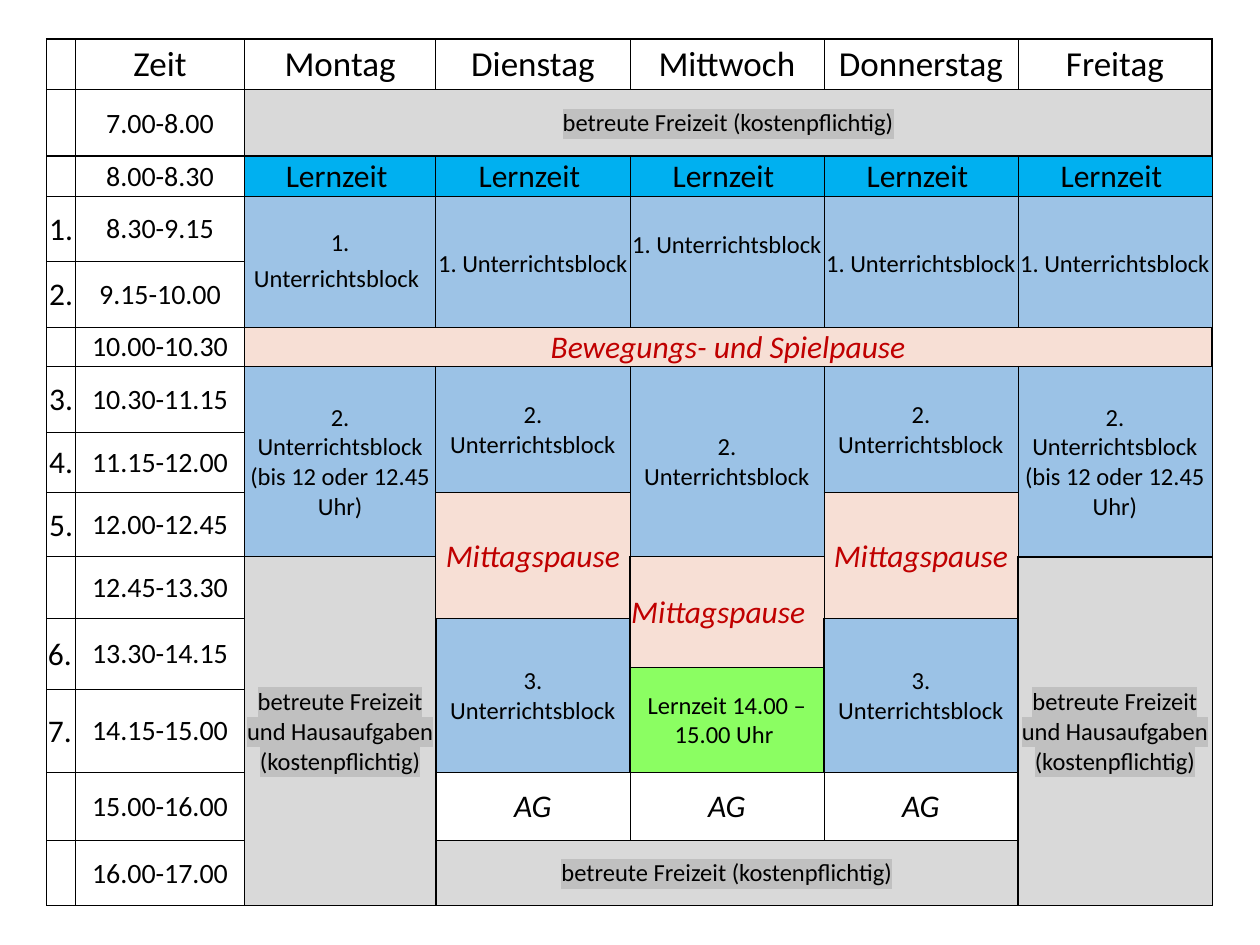
"""Build a weekly school timetable slide."""
from itertools import product

from lxml import etree
from pptx import Presentation
from pptx.dml.color import RGBColor
from pptx.enum import text
from pptx.oxml import ns
from pptx.util import Inches, Pt

BLACK = RGBColor(0x00, 0x00, 0x00)
WHITE = RGBColor(0xFF, 0xFF, 0xFF)
RED = RGBColor(0xC0, 0x00, 0x00)
GREY = RGBColor(0xD9, 0xD9, 0xD9)
SILVER = RGBColor(0xC0, 0xC0, 0xC0)
CYAN = RGBColor(0x00, 0xB0, 0xF0)
BLUE = RGBColor(0x9D, 0xC3, 0xE6)
STEEL = RGBColor(0x9B, 0xC2, 0xE6)
PEACH = RGBColor(0xF7, 0xDF, 0xD5)
GREEN = RGBColor(0x8B, 0xFE, 0x62)

FONT = "Calibri"
THIN, THICK = Pt(0.5), Pt(1)
TABLE_BOX = (0.37, 0.31, 9.25, 6.88)
COLUMN_WIDTHS = [0.23, 1.34, 1.52] + [1.54] * 4
ROW_HEIGHTS = [0.4, 0.53, 0.31, 0.52, 0.52, 0.31, 0.52, 0.48, 0.51, 0.49,
               0.39, 0.17, 0.66, 0.54, 0.52]
FRAMED_ROWS = (0, 1, 5)
DAY_COLUMNS = range(2, 7)

STYLES = {
    "head": {"size": 20},
    "time": {"size": 16},
    "period": {"size": 18},
    "period_left": {"size": 18, "align": text.PP_ALIGN.LEFT},
    "care": {"size": 14, "fill": GREY, "highlight": SILVER},
    "study": {"size": 18, "fill": CYAN},
    "block": {"size": 14, "fill": BLUE},
    "late_block": {"size": 14, "fill": STEEL},
    "pause": {"size": 18, "fill": PEACH, "color": RED, "italic": True},
    "pause_left": {"size": 18, "fill": PEACH, "color": RED, "italic": True,
                   "align": text.PP_ALIGN.LEFT},
    "long_study": {"size": 14, "fill": GREEN},
    "club": {"size": 18, "italic": True},
}

HEADINGS = ["Zeit", "Montag", "Dienstag", "Mittwoch", "Donnerstag", "Freitag"]
TIMES = {1: "7.00-8.00", 2: "8.00-8.30", 3: "8.30-9.15", 4: "9.15-10.00",
         5: "10.00-10.30", 6: "10.30-11.15", 7: "11.15-12.00",
         8: "12.00-12.45", 9: "12.45-13.30", 10: "13.30-14.15",
         12: "14.15-15.00", 13: "15.00-16.00", 14: "16.00-17.00"}
PERIODS = {3: "1.", 4: "2.", 6: "3.", 7: "4.", 8: "5.", 10: "6.", 12: "7."}
CARE = "betreute Freizeit (kostenpflichtig)"
HOMEWORK_CARE = "betreute Freizeit und Hausaufgaben\n(kostenpflichtig)"
SECOND = "2.\nUnterrichtsblock"
SECOND_LONG = SECOND + " (bis 12 oder 12.45 Uhr)"
THIRD = "3.\nUnterrichtsblock"

LESSONS = [
    (1, 2, 1, 5, "care", CARE, ""),
    (5, 2, 1, 5, "pause", "Bewegungs- und Spielpause", ""),
    (6, 2, 3, 1, "late_block", SECOND_LONG, ""),
    (6, 3, 2, 1, "late_block", SECOND, ""),
    (6, 4, 3, 1, "late_block", SECOND, ""),
    (6, 5, 2, 1, "late_block", SECOND, ""),
    (6, 6, 3, 1, "late_block", SECOND_LONG, "B"),
    (8, 3, 2, 1, "pause", "Mittagspause", ""),
    (8, 5, 2, 1, "pause", "Mittagspause", ""),
    (9, 2, 6, 1, "care", HOMEWORK_CARE, ""),
    (9, 4, 2, 1, "pause_left", "Mittagspause", "L"),
    (9, 6, 6, 1, "care", HOMEWORK_CARE, "LTB"),
    (10, 3, 3, 1, "block", THIRD, "L"),
    (10, 5, 3, 1, "late_block", THIRD, "L"),
    (11, 4, 2, 1, "long_study", "Lernzeit 14.00 – 15.00 Uhr ", "L"),
    (13, 3, 1, 1, "club", "AG", "L"),
    (13, 4, 1, 1, "club", "AG", ""),
    (13, 5, 1, 1, "club", "AG", ""),
    (14, 3, 1, 3, "care", CARE, "L"),
]


def timetable_blocks():
    """Return every filled block as row, column, spans, style, text and thick edges."""
    blocks = [(0, column, 1, 1, "head", heading, "")
              for column, heading in enumerate(HEADINGS, 1)]
    for row, time in TIMES.items():
        span = 2 if row == 10 else 1
        period_style = "period_left" if row >= 10 else "period"
        blocks.append((row, 0, span, 1, period_style, PERIODS.get(row, ""), ""))
        blocks.append((row, 1, span, 1, "time", time, ""))
    for column in DAY_COLUMNS:
        blocks.append((2, column, 1, 1, "study", "Lernzeit ", ""))
        blocks.append((3, column, 2, 1, "block", "1. Unterrichtsblock", ""))
    return blocks + LESSONS


def set_borders(cell, thick_edges):
    """Draw black lines on the four edges of a cell."""
    properties = cell._tc.get_or_add_tcPr()
    for position, edge in enumerate("LRTB"):
        width = THICK if edge in thick_edges else THIN
        line = etree.Element(ns.qn(f"a:ln{edge}"), w=str(int(width)))
        fill = etree.SubElement(line, ns.qn("a:solidFill"))
        etree.SubElement(fill, ns.qn("a:srgbClr"), val=str(BLACK))
        properties.insert(position, line)


def format_cell(cell, fill):
    """Set the fill, insets and anchor of a cell and keep empty text small."""
    cell.fill.solid()
    cell.fill.fore_color.rgb = fill
    formats = {"margin_left": Inches(0.01), "margin_right": Inches(0.01),
               "margin_top": Inches(0.01), "margin_bottom": 0,
               "vertical_anchor": text.MSO_ANCHOR.MIDDLE}
    for name, value in formats.items():
        setattr(cell, name, value)
    ending = cell.text_frame.paragraphs[0]._p.get_or_add_endParaRPr()
    ending.set("sz", "800")


def add_run(paragraph, content, style, size):
    """Add one formatted run to a paragraph."""
    run = paragraph.add_run()
    run.text = content
    formats = {"size": Pt(size), "name": FONT,
               "italic": style.get("italic", False)}
    for name, value in formats.items():
        setattr(run.font, name, value)
    run.font.color.rgb = style.get("color", BLACK)
    if "highlight" in style:
        highlight = etree.Element(ns.qn("a:highlight"))
        etree.SubElement(highlight, ns.qn("a:srgbClr"),
                         val=str(style["highlight"]))
        run.font._element.find(ns.qn("a:latin")).addprevious(highlight)


def fill_text(cell, content, style):
    """Write the lines of a block into its cell."""
    frame = cell.text_frame
    for index, line in enumerate(content.split("\n")):
        paragraph = frame.add_paragraph() if index else frame.paragraphs[0]
        paragraph.alignment = style.get("align", text.PP_ALIGN.CENTER)
        if line:
            add_run(paragraph, line, style, style["size"])


def place_block(table, block):
    """Format, merge and fill the cells of one timetable block."""
    row, column, row_span, column_span, style_name, content, edges = block
    style = STYLES[style_name]
    last_row, last_column = row + row_span - 1, column + column_span - 1
    if row in FRAMED_ROWS:
        edges += "TB" if row != 5 else "B"
        edges += "L" if column == 0 else ""
        edges += "R" if last_column == len(COLUMN_WIDTHS) - 1 else ""
    for position in product(range(row, last_row + 1),
                            range(column, last_column + 1)):
        cell = table.cell(*position)
        format_cell(cell, style.get("fill", WHITE))
        set_borders(cell, edges)
    origin = table.cell(row, column)
    if row_span * column_span > 1:
        origin.merge(table.cell(last_row, last_column))
    fill_text(origin, content, style)
    if (row, style_name) == (3, "block"):
        add_run(origin.text_frame.paragraphs[0],
                "  " if column == 4 else " ", style, 18)


def add_timetable(slide, box):
    """Add the timetable in the given box."""
    table = slide.shapes.add_table(len(ROW_HEIGHTS), len(COLUMN_WIDTHS),
                                   *map(Inches, box)).table
    table.first_row = table.horz_banding = False
    for column, width in zip(table.columns, COLUMN_WIDTHS):
        column.width = Inches(width)
    for row, height in zip(table.rows, ROW_HEIGHTS):
        row.height = Inches(height)
    for block in [(0, 0, 1, 1, "head", "", "")] + timetable_blocks():
        place_block(table, block)


def main():
    """Build and save the presentation."""
    presentation = Presentation()
    presentation.slide_width, presentation.slide_height = Inches(10), Inches(7.5)
    slide = presentation.slides.add_slide(presentation.slide_layouts[6])
    add_timetable(slide, TABLE_BOX)
    presentation.save("out.pptx")


if __name__ == "__main__":
    main()
